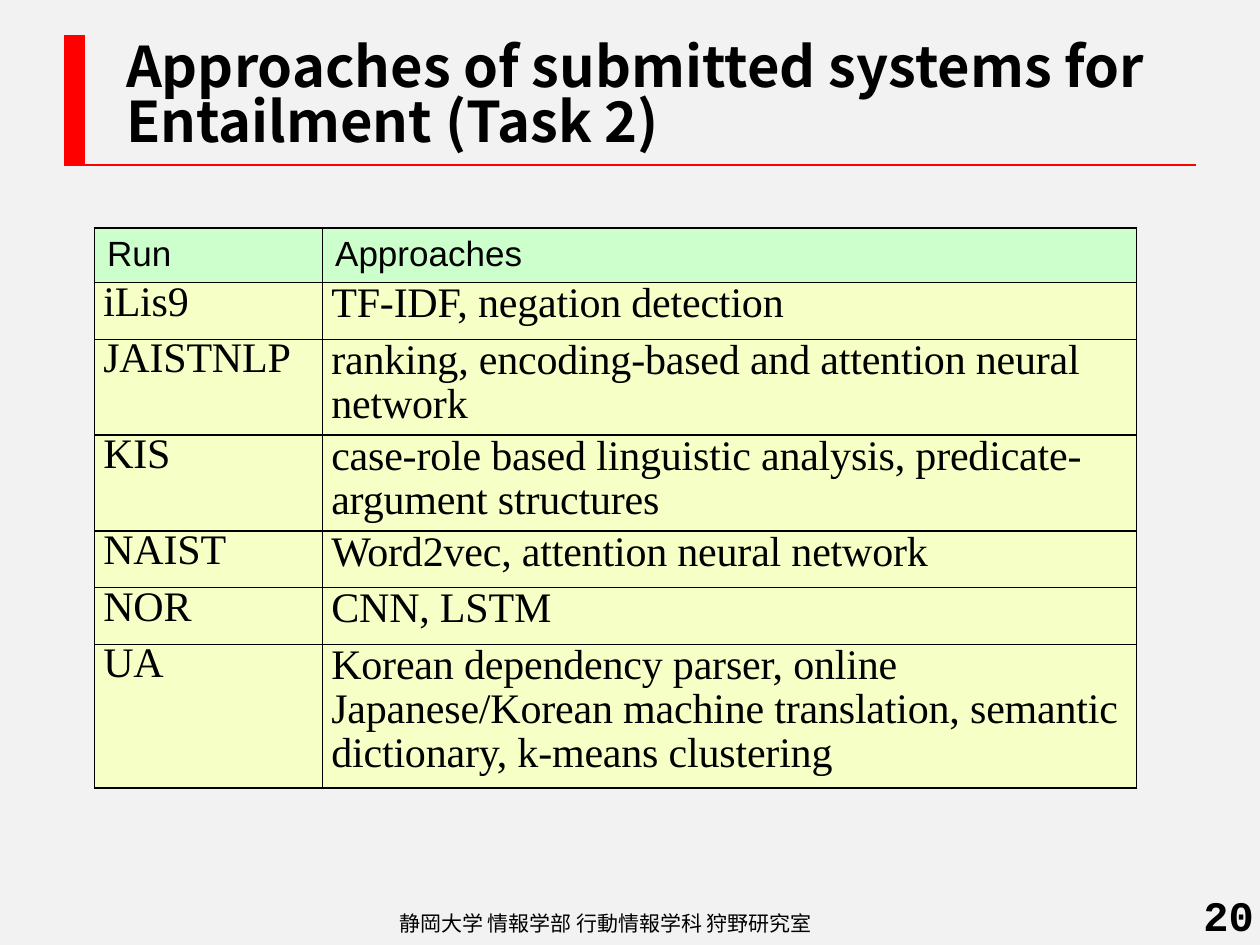
from lxml import etree
from pptx import Presentation, util as u
from pptx.dml.color import RGBColor
from pptx.enum import shapes, text
from pptx.oxml.ns import qn

TITLE = "Approaches of submitted systems for Entailment (Task 2)"
LAB = "静岡大学 情報学部 行動情報学科 狩野研究室"
PAGE = "20"
HEADER = ("Run", "Approaches")
RUNS = [
    ("iLis9", "TF-IDF, negation detection"),
    ("JAISTNLP", "ranking, encoding-based and attention neural network"),
    ("KIS", "case-role based linguistic analysis, predicate-argument structures"),
    ("NAIST", "Word2vec, attention neural network"),
    ("NOR", "CNN, LSTM"),
    ("UA", "Korean dependency parser, online Japanese/Korean machine translation, "
           "semantic dictionary, k-means clustering"),
]
COLUMNS = (1.81, 6.46)
HEADER_HEIGHT, RUN_HEIGHT = 0.39, 0.45
LINE_SPACING = (0.9, 0.95)
SPACE_AFTER = (0, 6)
RED, BLACK, GREEN, YELLOW, GREY = "FF0000", "000000", "CCFFCC", "F5FFC6", "F2F2F2"
CJK = "Noto Sans CJK JP"


def paint(target, color):
    target.solid()
    target.fore_color.rgb = RGBColor.from_string(color)


def write(frame, words, face, size, bold=False):
    frame.text = words
    paragraph = frame.paragraphs[0]
    font = paragraph.runs[0].font
    font.name, font.size, font.bold = face, u.Pt(size), bold
    paint(font.fill, BLACK)
    latin = font._element.find(qn("a:latin"))
    east_asian = etree.Element(qn("a:ea"), typeface=face)
    latin.addnext(east_asian)
    return paragraph


def add_borders(cell):
    properties = cell._tc.get_or_add_tcPr()
    for side in "LRTB":
        border = etree.SubElement(properties, qn(f"a:ln{side}"), w=str(u.Pt(1)))
        fill = etree.SubElement(border, qn("a:solidFill"))
        etree.SubElement(fill, qn("a:srgbClr"), val=BLACK)


def add_heading(slide):
    bar = slide.shapes.add_shape(
        shapes.MSO_SHAPE.RECTANGLE, *map(u.Inches, (0.51, 0.28, 0.16, 1.02)))
    bar.shadow.inherit = False
    paint(bar.fill, RED)
    rule = slide.shapes.add_connector(
        shapes.MSO_CONNECTOR.STRAIGHT, *map(u.Inches, (0.51, 1.31, 9.49, 1.31)))
    etree.SubElement(rule._element.spPr, qn("a:effectLst"))
    for line in (bar.line, rule.line):
        paint(line.fill, RED)
        line.width = u.Pt(0.75)

    title = slide.shapes.title
    title.left, title.top, title.width, title.height = map(
        u.Inches, (0.9, 0.28, 8.6, 1.01))
    frame = title.text_frame
    frame.auto_size = text.MSO_AUTO_SIZE.NONE
    frame.vertical_anchor = text.MSO_ANCHOR.MIDDLE
    heading = write(frame, TITLE, CJK, 32, True)
    heading.alignment = text.PP_ALIGN.LEFT
    heading.line_spacing = 0.82


def add_label(slide, words, place, face, size, bold=False):
    frame = slide.shapes.add_textbox(*map(u.Inches, place)).text_frame
    frame.word_wrap = True
    return write(frame, words, face, size, bold)


def add_approaches(slide):
    height = HEADER_HEIGHT + RUN_HEIGHT * len(RUNS)
    place = (0.75, 1.81, sum(COLUMNS), height)
    table = slide.shapes.add_table(
        len(RUNS) + 1, len(COLUMNS), *map(u.Inches, place)).table
    for column, width in zip(table.columns, COLUMNS):
        column.width = u.Inches(width)
    for r, entries in enumerate([HEADER] + RUNS):
        table.rows[r].height = u.Inches(RUN_HEIGHT if r else HEADER_HEIGHT)
        for c, words in enumerate(entries):
            cell = table.cell(r, c)
            add_borders(cell)
            paint(cell.fill, YELLOW if r else GREEN)
            if r == 0:
                write(cell.text_frame, words, "Arial", 20)
                continue
            cell.margin_left = cell.margin_right = u.Inches(0.07)
            cell.margin_top = cell.margin_bottom = 0
            entry = write(cell.text_frame, words, "Times New Roman", 24)
            entry.line_spacing = LINE_SPACING[c]
            entry.space_after = u.Pt(SPACE_AFTER[c])
            entry.runs[0].font._element.set("spc", "-10")


def main():
    deck = Presentation()
    deck.slide_width, deck.slide_height = u.Inches(10), u.Inches(7.5)
    slide = deck.slides.add_slide(deck.slide_layouts[5])
    paint(slide.background.fill, GREY)
    add_heading(slide)
    add_label(slide, LAB, (3.07, 7.18, 3.63, 0.3), CJK, 12)
    page = add_label(slide, PAGE, (7.92, 7.01, 2.13, 0.44), "Courier New", 24, True)
    page.alignment = text.PP_ALIGN.RIGHT
    add_approaches(slide)
    deck.save("out.pptx")


if __name__ == "__main__":
    main()
